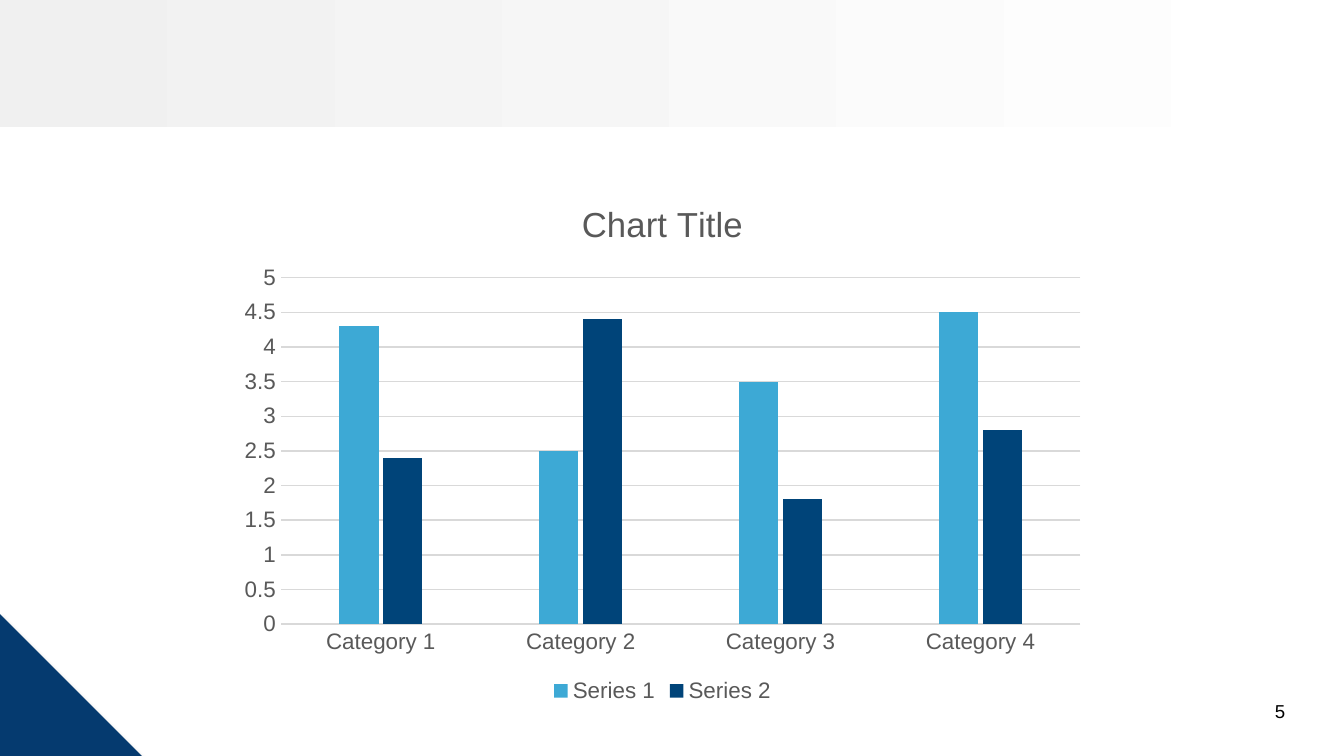
"""Builds a slide with a two-series column chart."""
from lxml.etree import SubElement
from pptx import Presentation
from pptx.chart.data import CategoryChartData
from pptx.dml.color import RGBColor
from pptx.enum.chart import XL_CHART_TYPE, XL_LEGEND_POSITION, XL_TICK_MARK
from pptx.enum.shapes import MSO_SHAPE
from pptx.enum.text import MSO_ANCHOR, PP_ALIGN
from pptx.oxml.ns import qn
from pptx.util import Pt

BLACK = RGBColor(0x00, 0x00, 0x00)
WHITE = RGBColor(0xFF, 0xFF, 0xFF)
PALE = RGBColor(0xF0, 0xF0, 0xF0)
NAVY = RGBColor(0x05, 0x3A, 0x6F)
GRAY = RGBColor(0x59, 0x59, 0x59)
GRID = RGBColor(0xD9, 0xD9, 0xD9)
SKY = RGBColor(0x3D, 0xA9, 0xD5)
DEEP = RGBColor(0x00, 0x44, 0x79)


def write(tf, text, size=12, color=GRAY, align=PP_ALIGN.CENTER):
    p = tf.paragraphs[0]
    p.alignment = align
    r = p.add_run()
    r.text = text
    r.font.name = "Arial"
    r.font.size = Pt(size)
    r.font.bold = False
    r.font.color.rgb = color


def style(font):
    font.name = "Arial"
    font.size = Pt(12)
    font.bold = False
    font.color.rgb = GRAY


prs = Presentation()
prs.slide_width, prs.slide_height = Pt(720), Pt(405)
s = prs.slides.add_slide(prs.slide_layouts[6])

band = s.shapes.add_shape(MSO_SHAPE.RECTANGLE, 0, 0, Pt(717), Pt(68))
band.shadow.inherit = False
band.line.fill.background()
band.fill.gradient()
band.fill.gradient_angle = 0
for stop, color, position in zip(band.fill.gradient_stops, (PALE, WHITE), (0, 1)):
    stop.color.rgb = color
    stop.position = position

corner = s.shapes.add_shape(MSO_SHAPE.RIGHT_TRIANGLE, Pt(-0.5), Pt(328.5), Pt(77), Pt(77))
corner.shadow.inherit = False
corner.line.fill.background()
corner.fill.solid()
corner.fill.fore_color.rgb = NAVY
effects = corner._element.spPr.find(qn("a:effectLst"))
shadow = SubElement(effects, qn("a:outerShdw"), blurRad=str(Pt(3.1)),
                    dist=str(Pt(1.8)), dir="5400000", rotWithShape="0")
tint = SubElement(shadow, qn("a:srgbClr"), val="000000")
SubElement(tint, qn("a:alpha"), val="35000")

data = CategoryChartData()
data.categories = [f"Category {i}" for i in range(1, 5)]
data.add_series("Series 1", (4.3, 2.5, 3.5, 4.5))
data.add_series("Series 2", (2.4, 4.4, 1.8, 2.8))
chart = s.shapes.add_chart(XL_CHART_TYPE.COLUMN_CLUSTERED, Pt(121.7), Pt(95),
                           Pt(466.5), Pt(284.4), data).chart
style(chart.font)
write(chart.chart_title.text_frame, "Chart Title", size=18.6)
chart.chart_title.include_in_layout = False

chart.has_legend = True
chart.legend.position = XL_LEGEND_POSITION.BOTTOM
chart.legend.include_in_layout = False
style(chart.legend.font)

plot = chart.plots[0]
plot.gap_width = 298
plot.overlap = -12
plot.vary_by_categories = False
for series, color in zip(plot.series, (SKY, DEEP)):
    series.format.fill.solid()
    series.format.fill.fore_color.rgb = color

cat, val = chart.category_axis, chart.value_axis
for axis in (cat, val):
    axis.major_tick_mark = XL_TICK_MARK.NONE
    axis.minor_tick_mark = XL_TICK_MARK.NONE
    style(axis.tick_labels.font)
val.minimum_scale, val.maximum_scale, val.major_unit = 0, 5, 0.5
val.has_major_gridlines = True
val.format.line.fill.background()
for line in (cat.format.line, val.major_gridlines.format.line):
    line.color.rgb = GRID
    line.width = Pt(0.75)

sp = s.shapes.add_textbox(Pt(527.8), Pt(370), Pt(167.8), Pt(21.6))
tf = sp.text_frame
tf.word_wrap = True
tf.vertical_anchor = MSO_ANCHOR.MIDDLE
write(tf, "5", size=10, color=BLACK, align=PP_ALIGN.RIGHT)

prs.save("out.pptx")
